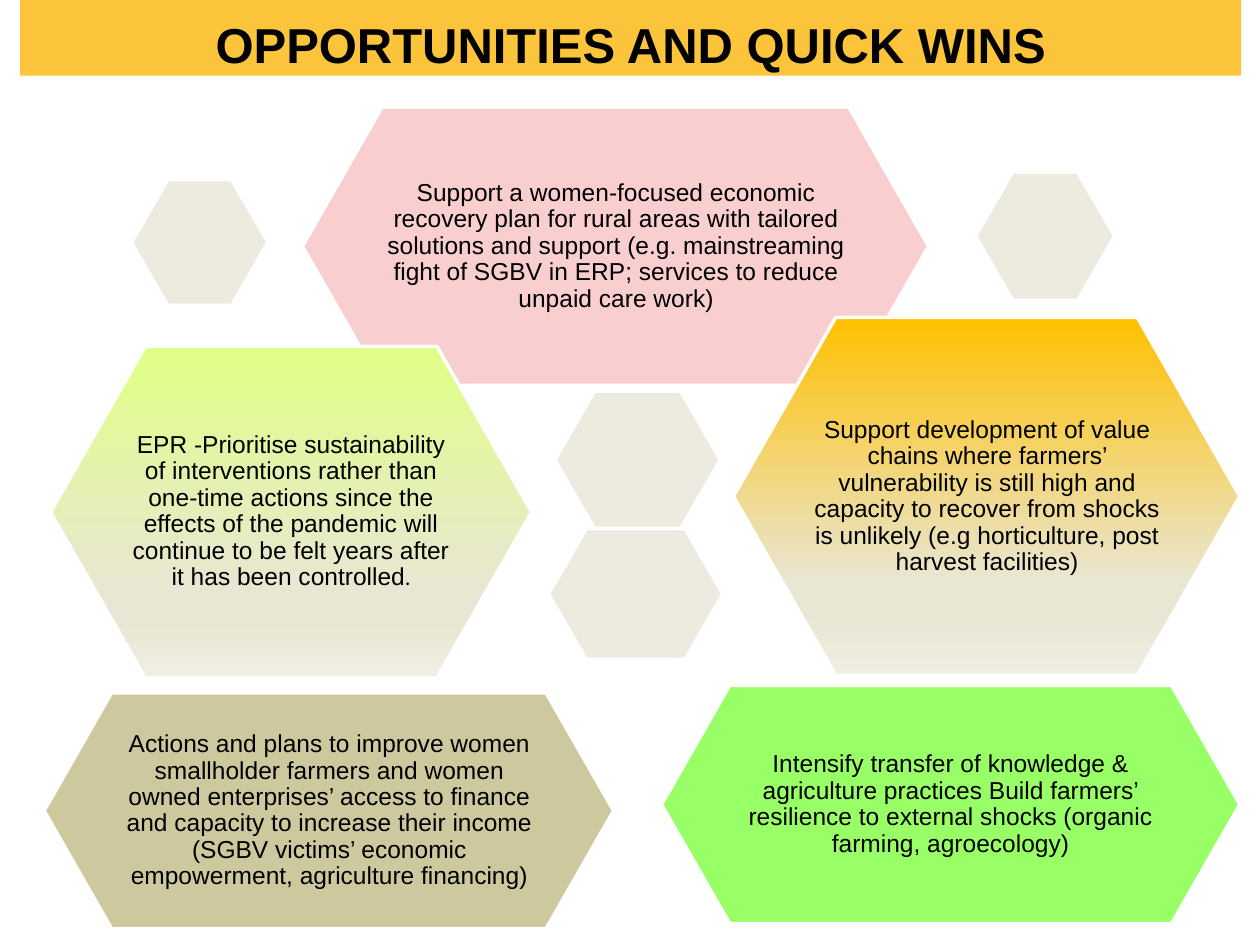
from copy import deepcopy

from pptx import Presentation
from pptx.dml.color import RGBColor
from pptx.enum.shapes import MSO_SHAPE
from pptx.enum.text import MSO_ANCHOR, PP_ALIGN
from pptx.oxml.ns import qn
from pptx.util import Inches, Pt

HEXAGON, RECTANGLE = MSO_SHAPE.HEXAGON, MSO_SHAPE.RECTANGLE
TOP, MIDDLE = MSO_ANCHOR.TOP, MSO_ANCHOR.MIDDLE
CENTER = PP_ALIGN.CENTER

COLORS = {
    "banner": "FBC43A", "text": "000000", "outline": "FFFFFF",
    "accent": "EDEBDF", "khaki": "CEC89E", "pink": "F9CECE",
    "green": "99FF66", "amber": "FFC000", "lime": "E0FF85",
    "sand": "E9E6D3", "cream": "F0EEE2",
}

# Hexagon place, text place, fill (one colour, or the top colour of a fade), text
FINANCE = ((0.35, 5.5, 4.52, 1.87), (0.91, 5.73, 3.41, 1.41), "khaki", False,
           ["Actions and plans to improve women smallholder farmers and women owned "
            "enterprises’ access to finance and capacity to increase their income "
            "(SGBV victims’ economic empowerment, agriculture financing)"])
RECOVERY = ((2.4, 0.85, 4.97, 2.21), (3.03, 1.13, 3.72, 1.65), "pink", False,
            ["Support a women-focused economic recovery plan for rural areas with "
             "tailored solutions and support (e.g. mainstreaming fight of SGBV in ERP; "
             "services to reduce unpaid care work)"])
VALUE_CHAINS = ((5.82, 2.52, 4.02, 2.84), (6.43, 2.95, 2.81, 1.98), "amber", True,
                ["Support development of value chains where farmers’ vulnerability is "
                 "still high and capacity to recover from shocks is unlikely "
                 "(e.g horticulture, post harvest facilities)"])
KNOWLEDGE = ((5.25, 5.44, 4.59, 1.89), (5.81, 5.67, 3.47, 1.43), "green", False,
             ["Intensify transfer of knowledge & agriculture practices Build farmers’ "
              "resilience to external shocks (organic farming, agroecology)"])
SUSTAINABILITY = ((0.4, 2.75, 3.82, 2.63), (0.97, 3.14, 2.68, 1.84), "lime", True,
                  ["EPR -Prioritise sustainability of interventions rather than one-time "
                   "actions since the effects of the pandemic will continue to be felt "
                   "years after it has been controlled", "."])
OPPORTUNITIES = [FINANCE, RECOVERY, VALUE_CHAINS, KNOWLEDGE, SUSTAINABILITY]

ACCENTS = [(4.42, 3.12, 1.28, 1.06), (1.06, 1.44, 1.05, 0.97),
           (4.37, 4.21, 1.35, 1.01), (7.76, 1.38, 1.07, 0.99)]


def color(name):
    return RGBColor.from_string(COLORS[name])


def add_plain_shape(slide, kind, place, fill):
    shape = slide.shapes.add_shape(kind, *map(Inches, place))
    shape.shadow.inherit = False
    shape.fill.solid()
    shape.fill.fore_color.rgb = color(fill)
    shape.line.fill.background()
    return shape


def add_hexagon(slide, place, fill, slant):
    hexagon = add_plain_shape(slide, HEXAGON, place, fill)
    hexagon.adjustments[0] = slant
    return hexagon


def fade_down(shape, top):
    """Fade from the top colour through sand to cream."""
    shape.fill.gradient()
    shape.fill.gradient_angle = 270
    stop_list = shape._element.spPr.find(".//" + qn("a:gsLst"))
    for stop in list(stop_list):
        stop_list.append(deepcopy(stop))
    stops = [(0, top), (0.74, "sand"), (0.83, "sand"), (1, "cream")]
    for stop, (position, name) in zip(shape.fill.gradient_stops, stops):
        stop.position = position
        stop.color.rgb = color(name)


def write(frame, parts, size, spacing, after, anchor, bold=False):
    frame.word_wrap = True
    frame.vertical_anchor = anchor
    paragraph = frame.paragraphs[0]
    paragraph.alignment = CENTER
    paragraph.line_spacing = spacing
    paragraph.space_after = Pt(after)
    font = paragraph.font
    font.name, font.size, font.bold = "Arial", Pt(size), bold
    font.color.rgb = color("text")
    for part in parts:
        paragraph.add_run().text = part
    return paragraph


def add_opportunity(slide, place, text_place, fill, fades, parts):
    hexagon = add_hexagon(slide, place, fill, 0.286)
    hexagon.line.color.rgb = color("outline")
    hexagon.line.width = Pt(2)
    if fades:
        fade_down(hexagon, fill)
    frame = slide.shapes.add_textbox(*map(Inches, text_place)).text_frame
    frame.margin_left = frame.margin_right = Inches(0.02)
    frame.margin_top = frame.margin_bottom = Inches(0.02)
    paragraph = write(frame, parts, 14, 0.9, 4.9, MIDDLE)
    # A separate closing mark has its own font
    for closing in paragraph.runs[1:]:
        closing.font.name = "Montserrat"


def main():
    deck = Presentation()
    deck.slide_width, deck.slide_height = Inches(10), Inches(7.5)
    slide = deck.slides.add_slide(deck.slide_layouts[6])

    # Title banner
    banner = add_plain_shape(slide, RECTANGLE, (0.16, 0, 9.69, 0.6), "banner")
    write(banner.text_frame, ["OPPORTUNITIES AND QUICK WINS"], 28, 1.15, 10, TOP, bold=True)

    # Opportunities
    for opportunity in OPPORTUNITIES:
        add_opportunity(slide, *opportunity)

    # Small decorative hexagons
    for place in ACCENTS:
        add_hexagon(slide, place, "accent", 0.289)

    deck.save("out.pptx")


if __name__ == "__main__":
    main()
